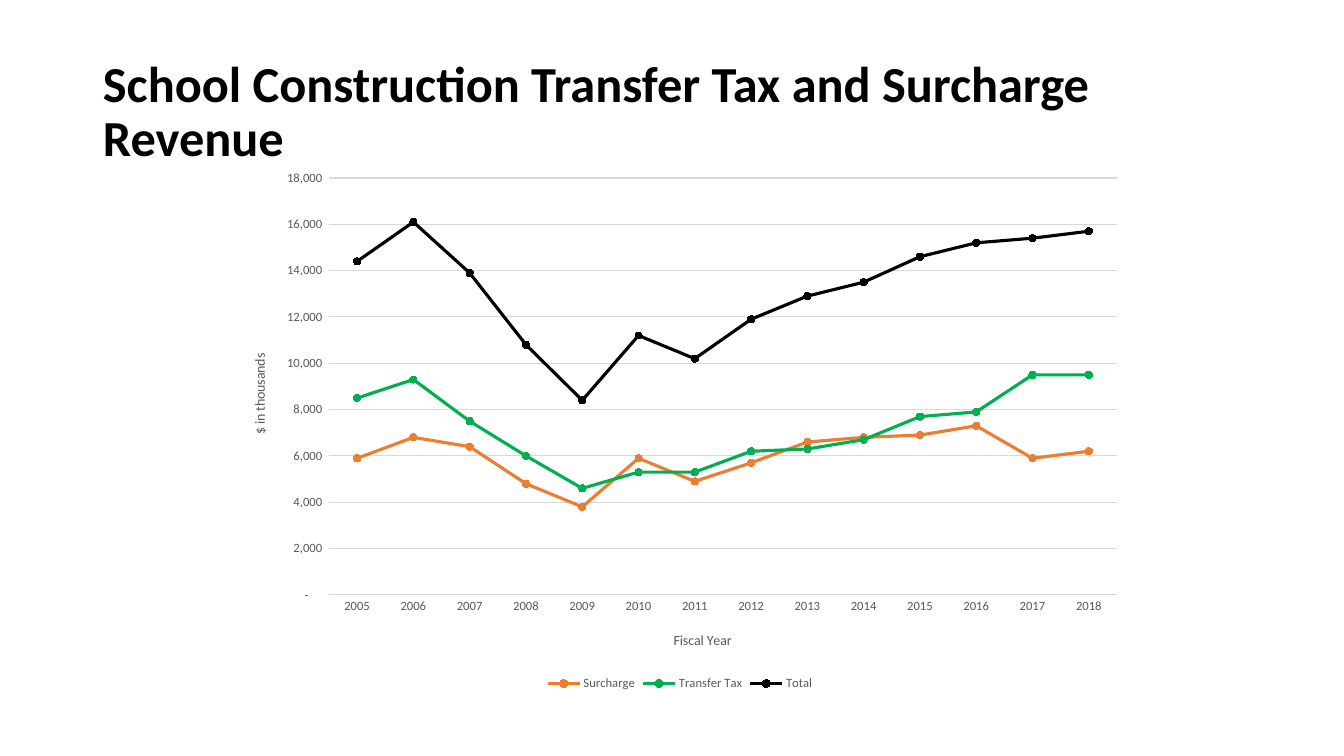
from lxml import etree
from pptx import Presentation
from pptx import util as u
from pptx.chart.data import CategoryChartData
from pptx.dml.color import RGBColor
from pptx.enum import chart as ch, text
from pptx.oxml.ns import qn

HEADING = "School Construction Transfer Tax and Surcharge Revenue"
YEARS = [str(year) for year in range(2005, 2019)]
REVENUE = [
    ("Surcharge", "ED7D31", [5900, 6800, 6400, 4800, 3800, 5900, 4900,
                             5700, 6600, 6800, 6900, 7300, 5900, 6200]),
    ("Transfer Tax", "00B050", [8500, 9300, 7500, 6000, 4600, 5300, 5300,
                                6200, 6300, 6700, 7700, 7900, 9500, 9500]),
    ("Total", "000000", [14400, 16100, 13900, 10800, 8400, 11200, 10200,
                         11900, 12900, 13500, 14600, 15200, 15400, 15700]),
]
THOUSANDS = '_(* #,##0_);_(* \\(#,##0\\);_(* "-"??_);_(@_)'
FONT, BLACK, GRAY, RULE = "Calibri", "000000", "595959", "D9D9D9"
HEADING_BOX = (93, 40, 1159, 146)
CHART_BOX = (224, 160, 912, 535)
PLOT_BOX = (329, 178, 788, 417)
YEAR_TITLE_AT = (671, 629)
DOLLAR_TITLE_AT = (248, 351)


def px(length):
    return u.Emu(round(length * 914400 / 100.8))


def rgb(color):
    return RGBColor.from_string(color)


def style_font(font, size, color, bold=False):
    font.name, font.size, font.bold = FONT, u.Pt(size), bold
    font.color.rgb = rgb(color)


def style_line(line, color, width):
    line.color.rgb = rgb(color)
    line.width = u.Pt(width)


def place(part, index, left, top, *size):
    for old in part.findall(qn("c:layout")):
        part.remove(old)
    layout = etree.Element(qn("c:layout"))
    part.insert(index, layout)
    manual = etree.SubElement(layout, qn("c:manualLayout"))
    settings = [("layoutTarget", "inner")] if size else []
    settings += [("xMode", "edge"), ("yMode", "edge")]
    chart_left, chart_top, chart_width, chart_height = CHART_BOX
    settings += [("x", (left - chart_left) / chart_width),
                 ("y", (top - chart_top) / chart_height)]
    if size:
        settings += [("w", size[0] / chart_width), ("h", size[1] / chart_height)]
    for tag, value in settings:
        etree.SubElement(manual, qn("c:" + tag)).set("val", str(value))


def add_heading(slide):
    heading = slide.shapes.add_textbox(*map(px, HEADING_BOX)).text_frame
    heading.word_wrap = True
    heading.vertical_anchor = text.MSO_ANCHOR.MIDDLE
    heading.text = HEADING
    heading.paragraphs[0].line_spacing = 0.9
    style_font(heading.paragraphs[0].runs[0].font, 36, BLACK, True)


def style_axis(axis, title, position):
    axis.major_tick_mark = axis.minor_tick_mark = ch.XL_TICK_MARK.NONE
    style_font(axis.tick_labels.font, 9, GRAY)
    axis.axis_title.text_frame.text = title
    style_font(axis.axis_title.text_frame.paragraphs[0].runs[0].font, 10, GRAY)
    place(axis.axis_title._element, 1, *position)


def add_revenue_chart(slide):
    data = CategoryChartData(number_format="#,##0")
    data.categories = YEARS
    for name, _, values in REVENUE:
        data.add_series(name, values)
    chart = slide.shapes.add_chart(
        ch.XL_CHART_TYPE.LINE_MARKERS, *map(px, CHART_BOX), data).chart
    style_font(chart.font, 10, BLACK)
    chart.has_title = False
    chart.has_legend = True
    chart.legend.position = ch.XL_LEGEND_POSITION.BOTTOM
    chart.legend.include_in_layout = False
    style_font(chart.legend.font, 9, GRAY)

    plot = chart.plots[0]
    plot.vary_by_categories = False
    for series, (_, color, _) in zip(plot.series, REVENUE):
        series.smooth = False
        style_line(series.format.line, color, 2.25)
        marker = series.marker
        marker.style, marker.size = ch.XL_MARKER_STYLE.CIRCLE, 5
        marker.format.fill.solid()
        marker.format.fill.fore_color.rgb = rgb(color)
        style_line(marker.format.line, color, 0.75)

    years, dollars = chart.category_axis, chart.value_axis
    style_axis(years, "Fiscal Year", YEAR_TITLE_AT)
    style_line(years.format.line, RULE, 0.75)
    style_axis(dollars, "$ in thousands", DOLLAR_TITLE_AT)
    dollars.format.line.fill.background()
    dollars.minimum_scale, dollars.maximum_scale = 0, 18000
    dollars.major_unit = 2000
    dollars.tick_labels.number_format = THOUSANDS
    dollars.tick_labels.number_format_is_linked = False
    dollars.has_major_gridlines = True
    style_line(dollars.major_gridlines.format.line, RULE, 0.75)
    place(chart._chartSpace.chart.plotArea, 0, *PLOT_BOX)


def main():
    deck = Presentation()
    deck.slide_width, deck.slide_height = px(1344), px(756)
    slide = deck.slides.add_slide(deck.slide_layouts[6])
    add_heading(slide)
    add_revenue_chart(slide)
    deck.save("out.pptx")


if __name__ == "__main__":
    main()
